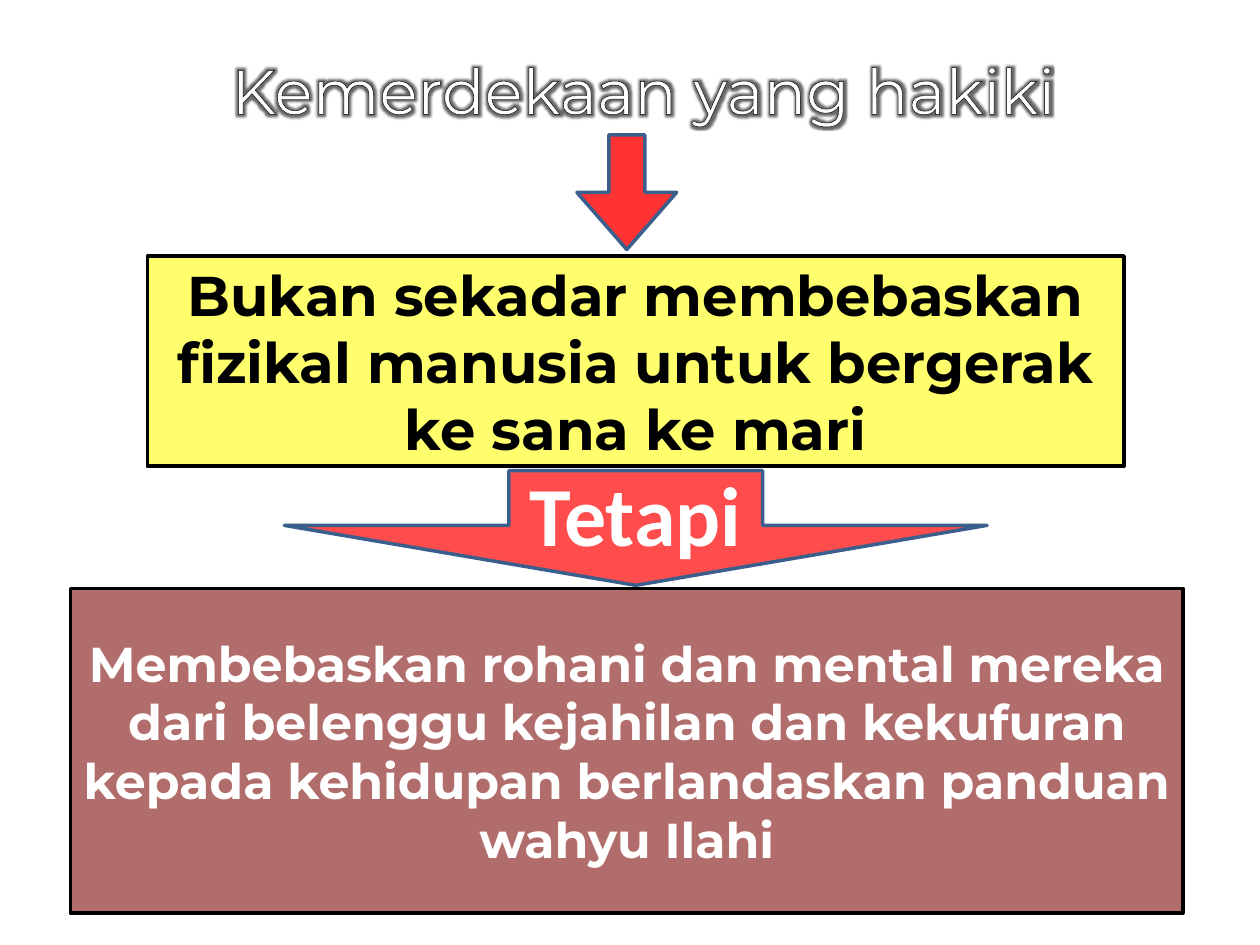
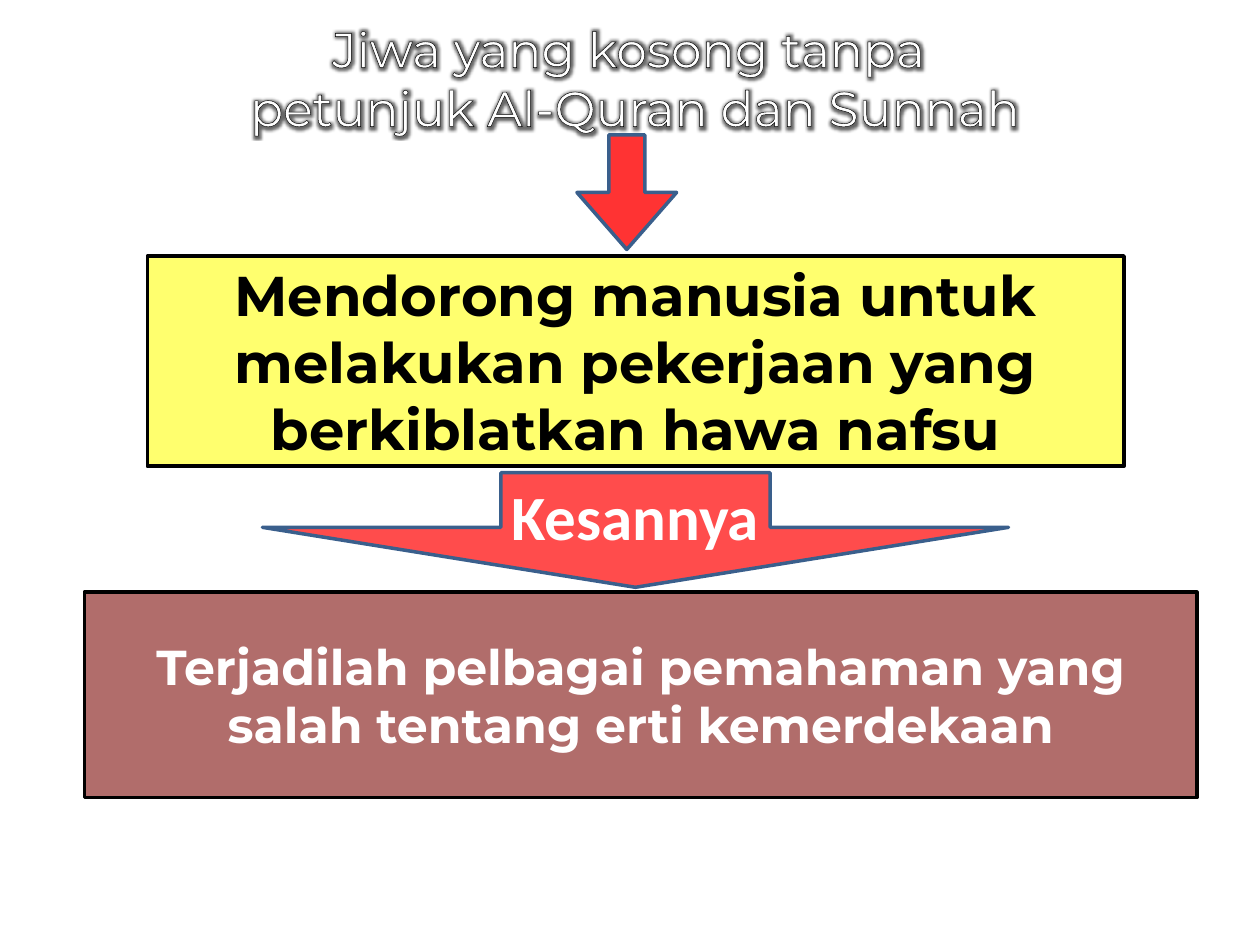
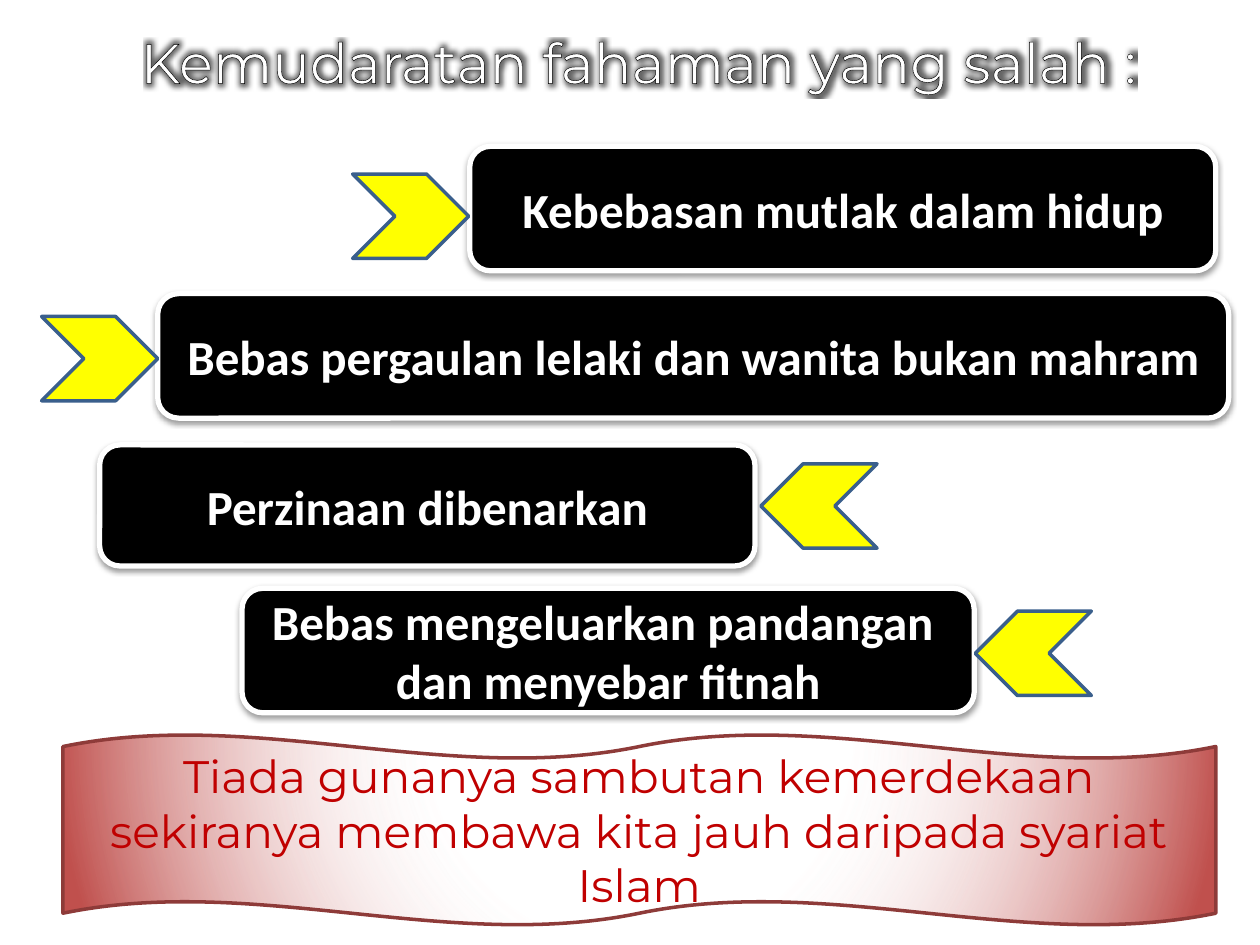
from dataclasses import dataclass

from lxml import etree
from pptx import Presentation
from pptx.dml.color import RGBColor
from pptx.enum.shapes import MSO_SHAPE
from pptx.enum.text import MSO_ANCHOR, MSO_AUTO_SIZE, PP_ALIGN
from pptx.oxml.ns import qn
from pptx.util import Cm, Pt

RECT = MSO_SHAPE.RECTANGLE
ROUND = MSO_SHAPE.ROUNDED_RECTANGLE
ARROW = MSO_SHAPE.RIGHT_ARROW
CHEVRON = MSO_SHAPE.CHEVRON
WAVE = MSO_SHAPE.DOUBLE_WAVE
TOP, MIDDLE = MSO_ANCHOR.TOP, MSO_ANCHOR.MIDDLE
GROW = MSO_AUTO_SIZE.SHAPE_TO_FIT_TEXT
CENTER = PP_ALIGN.CENTER
NS = "http://schemas.openxmlformats.org/drawingml/2006/main"


@dataclass(frozen=True)
class Theme:
    white: str = "FFFFFF"
    black: str = "000000"
    yellow: str = "FFFF00"
    red: str = "FF0000"
    brown: str = "953735"
    blue: str = "3A5F8C"
    rose: str = "C0504D"
    wine: str = "8E3B39"
    ruby: str = "C00000"
    head: str = "Montserrat"
    body: str = "Calibri"
    huge: int = 48
    large: int = 36
    lead: int = 32
    text: int = 28
    note: int = 26


T = Theme()


def apply(item, form):
    for key, value in form.items():
        setattr(item, key, value)


def node(xml):
    return etree.fromstring(xml.replace(">", f' xmlns:a="{NS}">', 1))


def tint(name, alpha=100):
    return f'<a:srgbClr val="{name}"><a:alpha val="{alpha * 1000}"/></a:srgbClr>'


def write(shape, lines, form, color, frame):
    body = shape.text_frame
    apply(body, frame)
    body.text = "\n".join(lines)
    for para in body.paragraphs:
        para.alignment = CENTER
        for run in para.runs:
            apply(run.font, form)
            run.font.color.rgb = RGBColor.from_string(color)


def face(name, size, bold=False):
    return {"name": name, "size": Pt(size), "bold": bold}


def draw(slide, kind, box, fill, line, alpha=100, width=2):
    shape = slide.shapes.add_shape(kind, *map(Cm, box))
    shape.shadow.inherit = False
    shape.fill.solid()
    shape.fill.fore_color.rgb = RGBColor.from_string(fill)
    shape.line.color.rgb = RGBColor.from_string(line)
    shape.line.width = Pt(width)
    if alpha < 100:
        color = shape.fill._xPr.find(qn("a:solidFill"))[0]
        color.append(node(f'<a:alpha val="{alpha * 1000}"></a:alpha>'))
    return shape


def title(slide, box, lines, size):
    shape = slide.shapes.title
    left, top, width, height = map(Cm, box)
    apply(shape, {"left": left, "top": top, "width": width, "height": height})
    frame = {"word_wrap": False, "auto_size": GROW, "vertical_anchor": TOP}
    write(shape, lines, face(T.head, size), T.white, frame)
    for para in shape.text_frame.paragraphs:
        for run in para.runs:
            props = run.font._element
            props.find(qn("a:solidFill")).addnext(node(
                f'<a:effectLst><a:glow rad="63500">{tint(T.black, 60)}'
                "</a:glow></a:effectLst>"))
            props.insert(0, node(
                f'<a:ln w="9525"><a:solidFill>{tint(T.black)}</a:solidFill></a:ln>'))


def panel(slide, box, text, fill, alpha, size, color):
    shape = draw(slide, RECT, box, fill, T.black, alpha)
    frame = {"word_wrap": True, "vertical_anchor": MIDDLE}
    write(shape, [text], face(T.head, size, True), color, frame)


def arrow(slide, box, alpha, tip):
    left, top, width, height = box
    shift = (width - height) / 2
    turned = (left + shift, top - shift, height, width)
    shape = draw(slide, ARROW, turned, T.red, T.blue, alpha)
    shape.rotation = 90
    shape.adjustments[0] = 0.361
    shape.adjustments[1] = tip


def link(slide, box, word, size, wide, high):
    left, top, width, height = box
    arrow(slide, box, 70, 0.523)
    spot = (left + (width - wide) / 2, top + (height - high) / 2 - 0.29, wide, high)
    label = slide.shapes.add_textbox(*map(Cm, spot))
    frame = {"word_wrap": False, "auto_size": GROW}
    write(label, [word], face(T.body, size, True), T.white, frame)


def flow(slide, head, first, join, last):
    panel(slide, (2.97, 5.16, 19.69, 4.24), first, T.yellow, 57, T.lead, T.black)
    arrow(slide, (11.63, 2.72, 2.01, 2.31), 80, 0.572)
    panel(slide, *last, T.brown, 73, T.text, T.white)
    title(slide, *head)
    link(slide, *join)


def point(slide, box, lines, side, gap, drop):
    left, top, width, height = box
    card = draw(slide, ROUND, box, T.black, T.white, width=3)
    card.fill._xPr.find(qn("a:effectLst")).append(node(
        '<a:outerShdw blurRad="39370" dist="20320" dir="5400000" rotWithShape="0">'
        f"{tint(T.black, 38)}</a:outerShdw>"))
    frame = {"word_wrap": True, "vertical_anchor": MIDDLE}
    write(card, lines, face(T.body, T.text, True), T.white, frame)
    wide, high = 2.34, 1.7
    start = left - gap - wide if side == "left" else left + width + gap
    mark = draw(slide, CHEVRON, (start, top + drop, wide, high), T.yellow, T.blue)
    mark.rotation = 0 if side == "left" else 180


def banner(slide, box, text):
    shape = draw(slide, WAVE, box, T.white, T.wine)
    props = shape.fill._xPr
    stops = [(0, T.white, 100), (35, T.white, 9), (100, T.rose, 100)]
    marks = "".join(f'<a:gs pos="{pos * 1000}">{tint(color, alpha)}</a:gs>'
                    for pos, color, alpha in stops)
    props.replace(props.find(qn("a:solidFill")), node(
        f'<a:gradFill rotWithShape="1"><a:gsLst>{marks}</a:gsLst><a:path path="circle">'
        '<a:fillToRect l="50000" t="-80000" r="50000" b="180000"/></a:path></a:gradFill>'))
    frame = {"word_wrap": True, "vertical_anchor": MIDDLE}
    write(shape, [text], face(T.head, T.note), T.ruby, frame)


def harms(slide, head, points, close):
    title(slide, *head)
    for item in points:
        point(slide, *item)
    banner(slide, (1.27, 14.81, 23.24, 3.84), close)


def main():
    deck = Presentation()
    deck.slide_width, deck.slide_height = Cm(25.4), Cm(19.05)

    def page():
        return deck.slides.add_slide(deck.slide_layouts[5])

    flow(
        page(),
        ((3.61, 0.91, 18.72, 1.8), ["Kemerdekaan yang hakiki"], T.large),
        "Bukan sekadar membebaskan fizikal manusia untuk bergerak ke sana ke mari",
        ((5.73, 9.49, 14.17, 2.31), "Tetapi", T.huge, 4.83, 2.31),
        ((1.42, 11.86, 22.43, 6.55),
         "Membebaskan rohani dan mental mereka dari belenggu kejahilan dan kekufuran "
         "kepada kehidupan berlandaskan panduan wahyu Ilahi"),
    )
    flow(
        page(),
        ((4.29, 0.25, 17.02, 2.64),
         ["Jiwa yang kosong tanpa ", "petunjuk Al-Quran dan Sunnah"], T.text),
        "Mendorong manusia untuk melakukan pekerjaan yang berkiblatkan hawa nafsu",
        ((5.29, 9.53, 15.04, 2.31), "Kesannya", T.large, 5.56, 1.8),
        ((1.7, 11.94, 22.43, 4.14),
         "Terjadilah pelbagai pemahaman yang salah tentang erti kemerdekaan"),
    )
    harms(
        page(),
        ((1.63, 0.43, 22.5, 1.63), ["Kemudaratan fahaman yang salah :"], T.lead),
        [
            ((9.47, 2.95, 15.04, 2.51), ["Kebebasan mutlak dalam hidup"],
             "left", 0.02, 0.56),
            ((3.18, 5.92, 21.59, 2.51),
             ["Bebas pergaulan lelaki dan wanita bukan mahram"], "left", 0, 0.46),
            ((2.01, 8.97, 13.21, 2.44), ["Perzinaan dibenarkan"], "right", 0.12, 0.38),
            ((4.88, 11.86, 14.76, 2.51),
             ["Bebas mengeluarkan pandangan ", "dan menyebar fitnah"],
             "right", 0.02, 0.46),
        ],
        "Tiada gunanya sambutan kemerdekaan sekiranya membawa kita jauh "
        "daripada syariat Islam",
    )
    deck.save("out.pptx")


if __name__ == "__main__":
    main()
